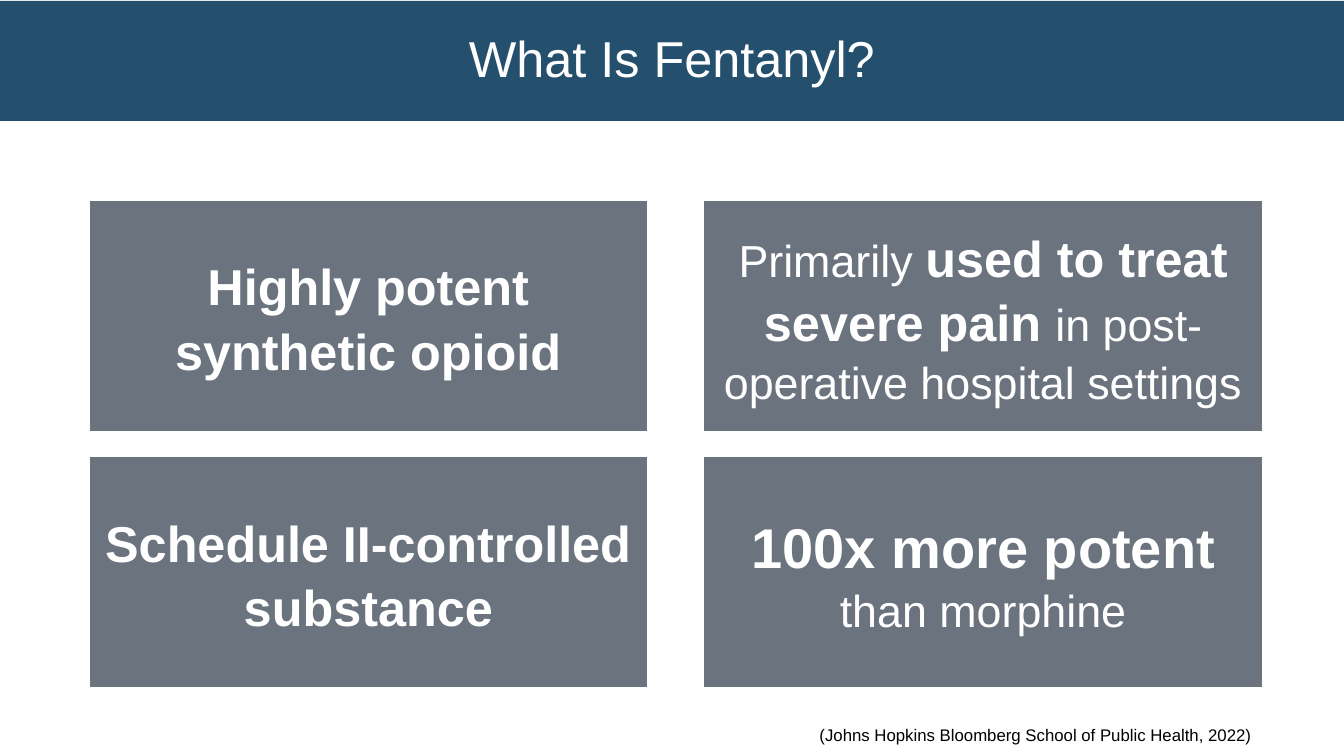
from dataclasses import dataclass

from lxml.etree import SubElement
from pptx import Presentation
from pptx.dml.color import RGBColor
from pptx.enum.shapes import MSO_SHAPE
from pptx.enum.text import MSO_ANCHOR, PP_ALIGN
from pptx.oxml.ns import qn
from pptx.util import Pt


@dataclass(frozen=True)
class Theme:
    """Colours, font and type sizes of the slide."""
    banner: RGBColor = RGBColor(0x24, 0x50, 0x6D)
    card: RGBColor = RGBColor(0x46, 0x50, 0x5F)
    white: RGBColor = RGBColor(0xFF, 0xFF, 0xFF)
    black: RGBColor = RGBColor(0, 0, 0)
    font: str = "Arial"
    title: int = 36
    stat: int = 40
    strong: int = 36
    plain: int = 32
    source: int = 12


THEME = Theme()
FACTS = [
    [("Highly potent synthetic opioid", THEME.strong, True)],
    [("Primarily ", THEME.plain, False),
     ("used to treat severe pain ", THEME.strong, True),
     ("in post-operative hospital settings", THEME.plain, False)],
    [("Schedule II-controlled substance", THEME.strong, True)],
    [("100x more potent ", THEME.stat, True),
     ("than morphine", THEME.plain, False)],
]


def place(sp, x, y, w, h):
    """Set the box of a shape in points."""
    sp.left, sp.top, sp.width, sp.height = Pt(x), Pt(y), Pt(w), Pt(h)


def write(sp, runs, color, align, spacing=1.0):
    """Write one vertically centred paragraph of (text, size, bold) runs."""
    tf = sp.text_frame
    tf.word_wrap = True
    tf.vertical_anchor = MSO_ANCHOR.MIDDLE
    p = tf.paragraphs[0]
    p.alignment = align
    p.line_spacing = spacing
    for text, size, bold in runs:
        r = p.add_run()
        r.text = text
        r.font.name = THEME.font
        r.font.size = Pt(size)
        r.font.bold = bold
        r.font.color.rgb = color


def add_banner(s, text, x, y, w, h):
    """Turn the title placeholder into a filled banner."""
    sp = s.shapes.title
    place(sp, x, y, w, h)
    sp.fill.solid()
    sp.fill.fore_color.rgb = THEME.banner
    write(sp, [(text, THEME.title, False)], THEME.white, PP_ALIGN.CENTER, 0.9)


def add_card(s, runs, x, y, w, h):
    """Add one translucent fact card."""
    sp = s.shapes.add_shape(MSO_SHAPE.RECTANGLE, Pt(x), Pt(y), Pt(w), Pt(h))
    sp.shadow.inherit = False
    sp.fill.solid()
    sp.fill.fore_color.rgb = THEME.card
    color = next(sp.fill._xPr.iter(qn("a:srgbClr")))
    SubElement(color, qn("a:alpha")).set("val", "80000")
    sp.line.color.rgb = THEME.white
    sp.line.width = Pt(0.75)
    write(sp, runs, THEME.white, PP_ALIGN.CENTER, 1.06)


def add_facts(s, facts, x, y, w, h, cols=2, gap_x=40.3, gap_y=18):
    """Lay the fact cards out as a grid inside the box."""
    rows = len(facts) // cols
    card_w = (w - gap_x * (cols - 1)) / cols
    card_h = (h - gap_y * (rows - 1)) / rows
    for i, runs in enumerate(facts):
        row, col = divmod(i, cols)
        add_card(s, runs, x + col * (card_w + gap_x),
                 y + row * (card_h + gap_y), card_w, card_h)


def add_source(s, text, x, y, w, h):
    """Add the right-aligned source line."""
    sp = s.shapes.add_textbox(Pt(x), Pt(y), Pt(w), Pt(h))
    sp.text_frame.margin_right = Pt(0)
    write(sp, [(text, THEME.source, False)], THEME.black, PP_ALIGN.RIGHT)


def main():
    """Build and save the slide."""
    prs = Presentation()
    prs.slide_width, prs.slide_height = Pt(960), Pt(540)
    s = prs.slides.add_slide(prs.slide_layouts[5])
    add_banner(s, "What Is Fentanyl?", 0, 0.7, 960, 85.7)
    add_facts(s, FACTS, 63.7, 143.3, 838, 347.8)
    add_source(s, "(Johns Hopkins Bloomberg School of Public Health, 2022)",
               570.2, 510.5, 324, 28.8)
    prs.save("out.pptx")


if __name__ == "__main__":
    main()
